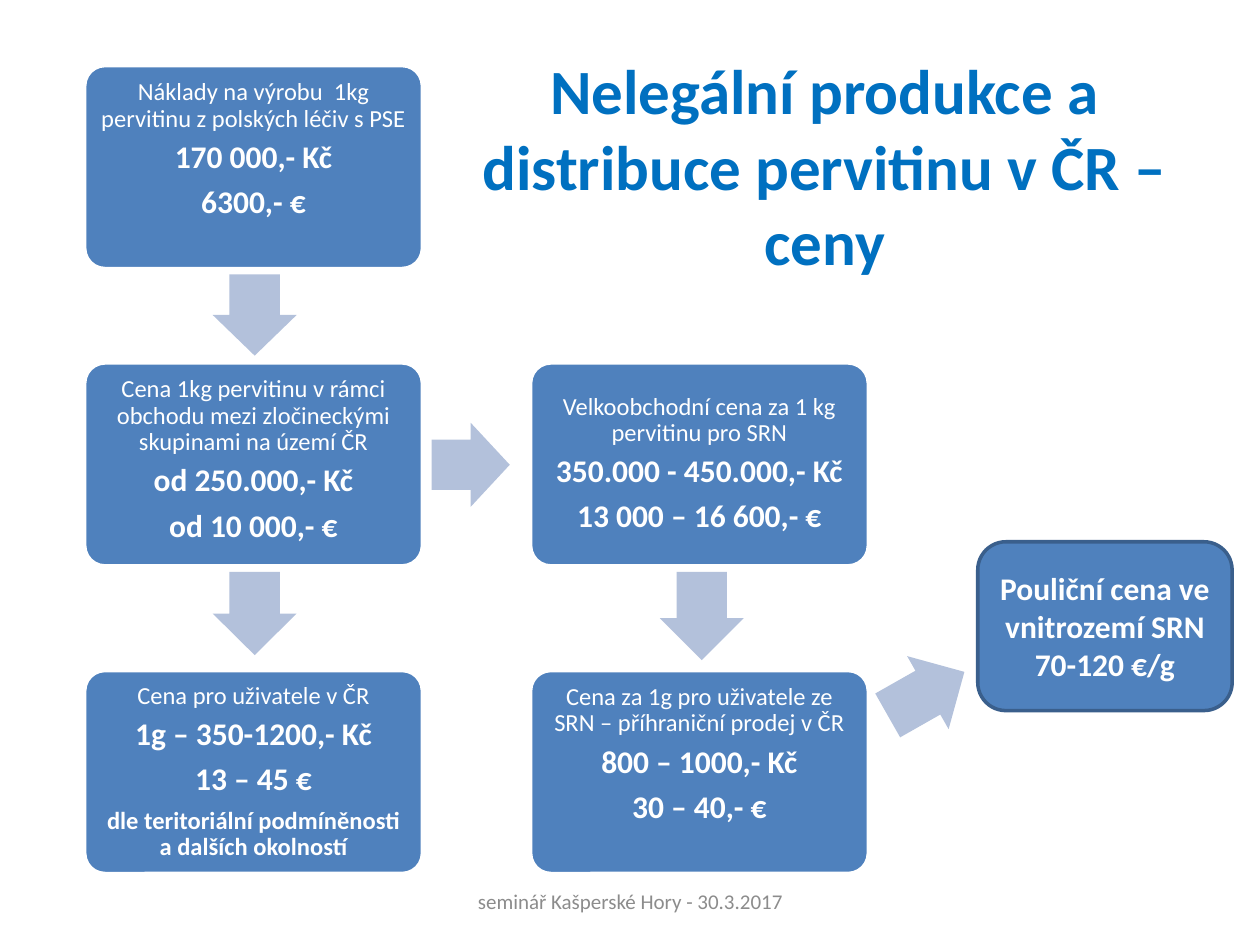
from pptx import Presentation
from pptx.dml.color import RGBColor
from pptx.enum.shapes import MSO_SHAPE
from pptx.enum.text import MSO_ANCHOR, PP_ALIGN
from pptx.util import Pt

ROUNDED = MSO_SHAPE.ROUNDED_RECTANGLE
ARROW = MSO_SHAPE.RIGHT_ARROW
TOP, MIDDLE = MSO_ANCHOR.TOP, MSO_ANCHOR.MIDDLE
CENTER = PP_ALIGN.CENTER

BLUE = RGBColor(0x4F, 0x81, 0xBD)
DARK_BLUE = RGBColor(0x3A, 0x5F, 0x8C)
PALE_BLUE = RGBColor(0xB3, 0xC1, 0xDB)
TITLE_BLUE = RGBColor(0x00, 0x70, 0xC0)
GREY = RGBColor(0x8C, 0x8C, 0x8C)
WHITE = RGBColor(0xFF, 0xFF, 0xFF)

FONT = "Calibri"
LEFT_COLUMN, RIGHT_COLUMN = 48.4, 303.2
COST_ROW, TRADE_ROW, USER_ROW = 37.5, 207.4, 383.2
STEP_WIDTH, STEP_HEIGHT = 193, 116
ARROW_WIDTH = 48

# Column, row, anchor, caption, prices, closing remark
STEPS = [
    (LEFT_COLUMN, COST_ROW, TOP,
     "Náklady na výrobu  1kg pervitinu z polských léčiv s PSE",
     ["170 000,- Kč", "6300,- €"], None),
    (LEFT_COLUMN, TRADE_ROW, TOP,
     "Cena 1kg pervitinu v rámci obchodu mezi zločineckými skupinami na území ČR",
     ["od 250.000,- Kč", "od 10 000,- €"], None),
    (RIGHT_COLUMN, TRADE_ROW, MIDDLE,
     "Velkoobchodní cena za 1 kg pervitinu pro SRN",
     ["350.000 - 450.000,- Kč", "13 000 – 16 600,- €"], None),
    (LEFT_COLUMN, USER_ROW, MIDDLE, "Cena pro uživatele v ČR",
     ["1g – 350-1200,- Kč", "13 – 45 €"],
     "dle teritoriální podmíněnosti a dalších okolností"),
    (RIGHT_COLUMN, USER_ROW, TOP,
     "Cena za 1g pro uživatele ze SRN – příhraniční prodej v ČR",
     ["800 – 1000,- Kč", "30 – 40,- €"], None),
]

# Centre x, centre y, length, direction in degrees
ARROWS = [
    (145.5, 180, 46.5, 90),
    (269, 265.6, 44.6, 0),
    (145.5, 350.6, 47.5, 90),
    (401, 352, 50.4, 90),
    (529.2, 396.4, 50.4, -29.6),
]


def write(frame, text, size=18, bold=False, color=WHITE, spacing=None, after=0):
    """Add one centred paragraph, filling the empty first one if there is one."""
    paragraph = frame.paragraphs[0]
    if paragraph.runs:
        paragraph = frame.add_paragraph()
    paragraph.alignment = CENTER
    paragraph.line_spacing = spacing
    paragraph.space_before = Pt(0)
    paragraph.space_after = Pt(after)
    run = paragraph.add_run()
    run.text = text
    run.font.name = FONT
    run.font.size = Pt(size)
    run.font.bold = bold
    run.font.color.rgb = color


def prepare_frame(shape, anchor=MIDDLE):
    frame = shape.text_frame
    frame.word_wrap = True
    frame.vertical_anchor = anchor
    return frame


def add_rounded_box(slide, left, top, width, height, outline):
    box = slide.shapes.add_shape(ROUNDED, Pt(left), Pt(top), Pt(width), Pt(height))
    box.shadow.inherit = False
    box.fill.solid()
    box.fill.fore_color.rgb = BLUE
    box.line.color.rgb = outline
    box.line.width = Pt(2)
    return box


def add_step(slide, left, top, anchor, caption, prices, remark):
    step = add_rounded_box(slide, left, top, STEP_WIDTH, STEP_HEIGHT, WHITE)
    step.adjustments[0] = 0.1
    frame = prepare_frame(step, anchor)
    frame.margin_left = frame.margin_right = Pt(4.5)
    frame.margin_top = frame.margin_bottom = Pt(4.5)
    write(frame, caption, size=14, spacing=0.9, after=4.9)
    for price in prices:
        write(frame, price, bold=True, spacing=0.9, after=6.3)
    if remark:
        write(frame, remark, size=14, bold=True, spacing=0.9, after=4.9)


def add_arrow(slide, center_x, center_y, length, direction):
    arrow = slide.shapes.add_shape(
        ARROW, Pt(center_x - length / 2), Pt(center_y - ARROW_WIDTH / 2),
        Pt(length), Pt(ARROW_WIDTH))
    arrow.rotation = direction
    arrow.adjustments[0] = 0.6
    arrow.adjustments[1] = 0.5
    arrow.shadow.inherit = False
    arrow.fill.solid()
    arrow.fill.fore_color.rgb = PALE_BLUE
    arrow.line.fill.background()


def add_title(slide):
    title = slide.shapes.title
    title.left, title.top, title.width, title.height = (
        Pt(263.5), Pt(71.3), Pt(415.4), Pt(90))
    frame = prepare_frame(title)
    frame.margin_bottom = Pt(47.5)  # lifts the heading above the box centre
    write(frame, "Nelegální produkce a distribuce pervitinu v ČR – ceny",
          size=36, bold=True, color=TITLE_BLUE)


def add_street_price(slide):
    street_price = add_rounded_box(slide, 558.7, 309.6, 145.4, 96.5, DARK_BLUE)
    frame = prepare_frame(street_price)
    write(frame, "Pouliční cena ve vnitrozemí SRN", bold=True)
    write(frame, "70-120 €/g", bold=True)


def add_footer(slide):
    footer = slide.shapes.add_textbox(Pt(246.2), Pt(500.4), Pt(228.2), Pt(28.8))
    write(prepare_frame(footer), "seminář Kašperské Hory - 30.3.2017",
          size=12, color=GREY)


def main():
    presentation = Presentation()
    presentation.slide_width, presentation.slide_height = Pt(720), Pt(540)
    slide = presentation.slides.add_slide(presentation.slide_layouts[5])

    # Price chain
    for step in STEPS:
        add_step(slide, *step)
    for arrow in ARROWS:
        add_arrow(slide, *arrow)
    add_street_price(slide)

    # Heading and footer
    add_title(slide)
    add_footer(slide)

    presentation.save("out.pptx")


if __name__ == "__main__":
    main()
